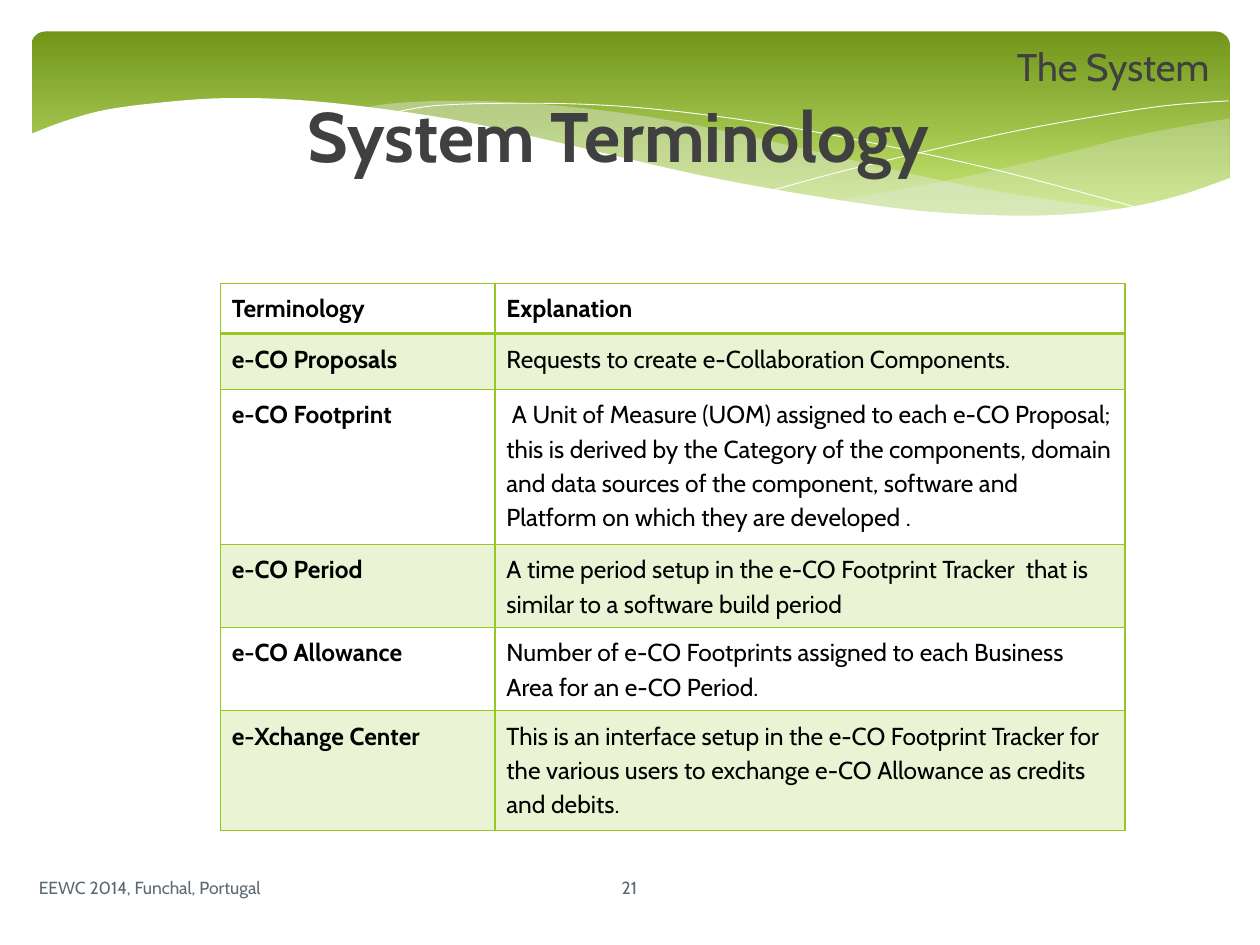
from lxml import etree
from pptx import Presentation
from pptx.dml.color import RGBColor
from pptx.enum.shapes import MSO_SHAPE
from pptx.enum.text import MSO_ANCHOR, PP_ALIGN
from pptx.oxml.ns import qn
from pptx.util import Inches, Pt

FONT = "Cabin"
GREEN, MIST, WHITE, DARK, SLATE = "98C723", "E7ECED", "FFFFFF", "404040", "5B6973"

RIGHT_WAVE = [
    [(9.76, 0.94), (9.35, 1.01), (8.91, 1.1), (8.32, 1.25), (7.53, 1.43), (6.61, 1.6)],
    [(6.61, 1.6), (7.19, 1.67), (7.69, 1.71), (8.14, 1.72), (8.54, 1.7),
     (8.97, 1.65), (9.35, 1.56), (9.76, 1.41)],
]
MIDDLE_WAVE = [
    [(8.93, 1.67), (8.37, 1.59), (7.75, 1.49), (7.06, 1.34), (6.29, 1.16), (5.55, 1),
     (4.89, 0.89), (4.2, 0.82), (3.61, 0.8), (3.13, 0.82), (2.86, 0.86)],
    [(2.86, 0.86), (3.42, 0.94), (4.04, 1.06), (4.91, 1.26), (5.66, 1.43), (6.34, 1.56),
     (6.95, 1.65), (7.48, 1.7), (8.07, 1.73), (8.57, 1.71), (8.93, 1.67)],
]
FALLING_LINE = [
    [(3.09, 0.9), (3.44, 0.84), (4.01, 0.82), (4.69, 0.83), (5.33, 0.88), (6.08, 0.98),
     (6.95, 1.14), (7.95, 1.36), (9.07, 1.66)],
]
RISING_LINE = [
    [(6.13, 1.51), (6.72, 1.35), (7.48, 1.17), (8.06, 1.04), (8.66, 0.93),
     (9.24, 0.84), (9.75, 0.8)],
]
WHITE_WAVE = [
    [(9.77, 1.41), (9.4, 1.54), (8.99, 1.64), (8.5, 1.7), (7.93, 1.71), (7.26, 1.67),
     (6.48, 1.56), (5.55, 1.39), (4.47, 1.14), (3.65, 0.96), (2.92, 0.85), (2.3, 0.79),
     (1.77, 0.78), (1.32, 0.81), (0.85, 0.87), (0.52, 0.96), (0.23, 1.07)],
    [(0.23, 2.24), (9.77, 2.24)],
]

ROWS = [
    ("Terminology", "Explanation"),
    ("e-CO Proposals", "Requests to create e-Collaboration Components."),
    ("e-CO Footprint",
     " A Unit of Measure (UOM) assigned to each e-CO Proposal; this is derived by the "
     "Category of the components, domain and data sources of the component, software and "
     "Platform on which they are developed ."),
    ("e-CO Period",
     "A time period setup in the e-CO Footprint Tracker  that is similar to a software "
     "build period"),
    ("e-CO Allowance",
     "Number of e-CO Footprints assigned to each Business Area for an e-CO Period."),
    ("e-Xchange Center",
     "This is an interface setup in the e-CO Footprint Tracker for the various users to "
     "exchange e-CO Allowance as credits and debits."),
]
COL_WIDTHS = [2.18, 5]
ROW_HEIGHTS = [0.4, 0.44, 1.23, 0.66, 0.66, 0.95]


def rgb(value):
    """Return the colour of a hex string."""
    return RGBColor.from_string(value)


def fill_solid(fill, color, opacity=100):
    """Fill with one colour at an opacity in percent."""
    fill.solid()
    fill.fore_color.rgb = rgb(color)
    if opacity < 100:
        clr = fill._xPr.find(qn("a:solidFill"))[0]
        etree.SubElement(clr, qn("a:alpha"), val=str(opacity * 1000))


def smooth(points, steps=6):
    """Return points on a Catmull-Rom curve through the given points."""
    if len(points) < 3:
        return points
    padded = [points[0], *points, points[-1]]
    curve = [points[0]]
    for a, b, c, d in zip(padded, padded[1:], padded[2:], padded[3:]):
        for i in range(1, steps + 1):
            t = i / steps
            curve.append(tuple(
                0.5 * (2 * q + (r - p) * t + (2 * p - 5 * q + 4 * r - u) * t ** 2
                       + (3 * q - p - 3 * r + u) * t ** 3)
                for p, q, r, u in zip(a, b, c, d)))
    return curve


def add_curve(s, edges, fill=None, opacity=100, line=None):
    """Add a freeform along smooth edges, closed when it has a fill."""
    points = [(Inches(x), Inches(y)) for edge in edges for x, y in smooth(edge)]
    builder = s.shapes.build_freeform(*points[0])
    builder.add_line_segments(points[1:], close=fill is not None)
    sp = builder.convert_to_shape()
    sp.shadow.inherit = False
    if fill:
        fill_solid(sp.fill, fill, opacity)
    else:
        sp.fill.background()
    if line:
        sp.line.color.rgb = rgb(line)
        sp.line.width = Pt(0.5)
    else:
        sp.line.fill.background()


def add_banner(s):
    """Add the green gradient banner."""
    sp = s.shapes.add_shape(MSO_SHAPE.ROUNDED_RECTANGLE, Inches(0.25), Inches(0.25),
                            Inches(9.51), Inches(1.56))
    sp.adjustments[0] = 0.07
    sp.shadow.inherit = False
    sp.line.fill.background()
    sp.fill.gradient()
    sp.fill.gradient_angle = 270
    for stop, pos, color in zip(sp.fill.gradient_stops, (0, 0.9), ("72951A", "C5E672")):
        stop.position = pos
        stop.color.rgb = rgb(color)


def write(tf, text, size, color, bold=False, align=PP_ALIGN.LEFT, spacing=None):
    """Write one formatted paragraph into a text frame."""
    tf.word_wrap = True
    p = tf.paragraphs[0]
    p.alignment = align
    p.line_spacing = spacing
    r = p.add_run()
    r.text = text
    r.font.name = FONT
    r.font.size = Pt(size)
    r.font.bold = bold
    r.font.color.rgb = rgb(color)


def add_text(s, text, x, y, w, h, **fmt):
    """Add a vertically centred text box."""
    tf = s.shapes.add_textbox(Inches(x), Inches(y), Inches(w), Inches(h)).text_frame
    tf.vertical_anchor = MSO_ANCHOR.MIDDLE
    write(tf, text, **fmt)


def set_title(s, text):
    """Place the title placeholder in front and fill it in."""
    title = s.shapes.title
    s.shapes._spTree.append(title._element)
    title.left, title.top = Inches(1.07), Inches(0.71)
    title.width, title.height = Inches(7.68), Inches(0.71)
    title.text_frame.vertical_anchor = MSO_ANCHOR.MIDDLE
    write(title.text_frame, text, size=40, color=DARK, bold=True, align=PP_ALIGN.CENTER)


def set_borders(cell, color, **widths):
    """Set the cell borders, with widths in points by side."""
    tc_pr = cell._tc.get_or_add_tcPr()
    for i, (side, width) in enumerate(widths.items()):
        ln = etree.Element(qn(f"a:ln{side}"), w=str(Pt(width)))
        solid = etree.SubElement(ln, qn("a:solidFill"))
        etree.SubElement(solid, qn("a:srgbClr"), val=color)
        tc_pr.insert(i, ln)


def add_terms_table(s):
    """Add the table of terms and explanations."""
    table = s.shapes.add_table(len(ROWS), len(COL_WIDTHS), Inches(1.75), Inches(2.25),
                               Inches(sum(COL_WIDTHS)), Inches(sum(ROW_HEIGHTS))).table
    table.first_row = table.horz_banding = False
    for col, width in zip(table.columns, COL_WIDTHS):
        col.width = Inches(width)
    for i, (row, height, texts) in enumerate(zip(table.rows, ROW_HEIGHTS, ROWS)):
        row.height = Inches(height)
        for j, (cell, text) in enumerate(zip(row.cells, texts)):
            cell.margin_left = cell.margin_right = Inches(0.09)
            cell.margin_top = cell.margin_bottom = Inches(0.05)
            write(cell.text_frame, text, size=14, color="000000",
                  bold=i == 0 or j == 0, spacing=1.15)
            if i % 2:
                fill_solid(cell.fill, GREEN, 20)
            else:
                cell.fill.background()
            set_borders(cell, GREEN, L=1, R=1, T=2 if i == 1 else 1, B=2 if i == 0 else 1)


def main():
    """Build the terminology slide."""
    prs = Presentation()
    prs.slide_width, prs.slide_height = Inches(10), Inches(7.5)
    s = prs.slides.add_slide(prs.slide_layouts[5])
    add_banner(s)
    add_curve(s, RIGHT_WAVE, fill=MIST, opacity=29)
    add_curve(s, MIDDLE_WAVE, fill=MIST, opacity=40)
    add_curve(s, FALLING_LINE, line=WHITE)
    add_curve(s, RISING_LINE, line=WHITE)
    add_curve(s, WHITE_WAVE, fill=WHITE)
    add_text(s, "EEWC 2014, Funchal, Portugal", 0.21, 6.84, 4.14, 0.4, size=10, color=SLATE)
    add_text(s, "21", 4.36, 6.84, 1.27, 0.4, size=10, color=SLATE, align=PP_ALIGN.CENTER)
    add_terms_table(s)
    set_title(s, "System Terminology")
    add_text(s, "The System", 7.92, 0.33, 1.83, 0.39, size=22, color=DARK,
             align=PP_ALIGN.CENTER)
    prs.save("out.pptx")


if __name__ == "__main__":
    main()
